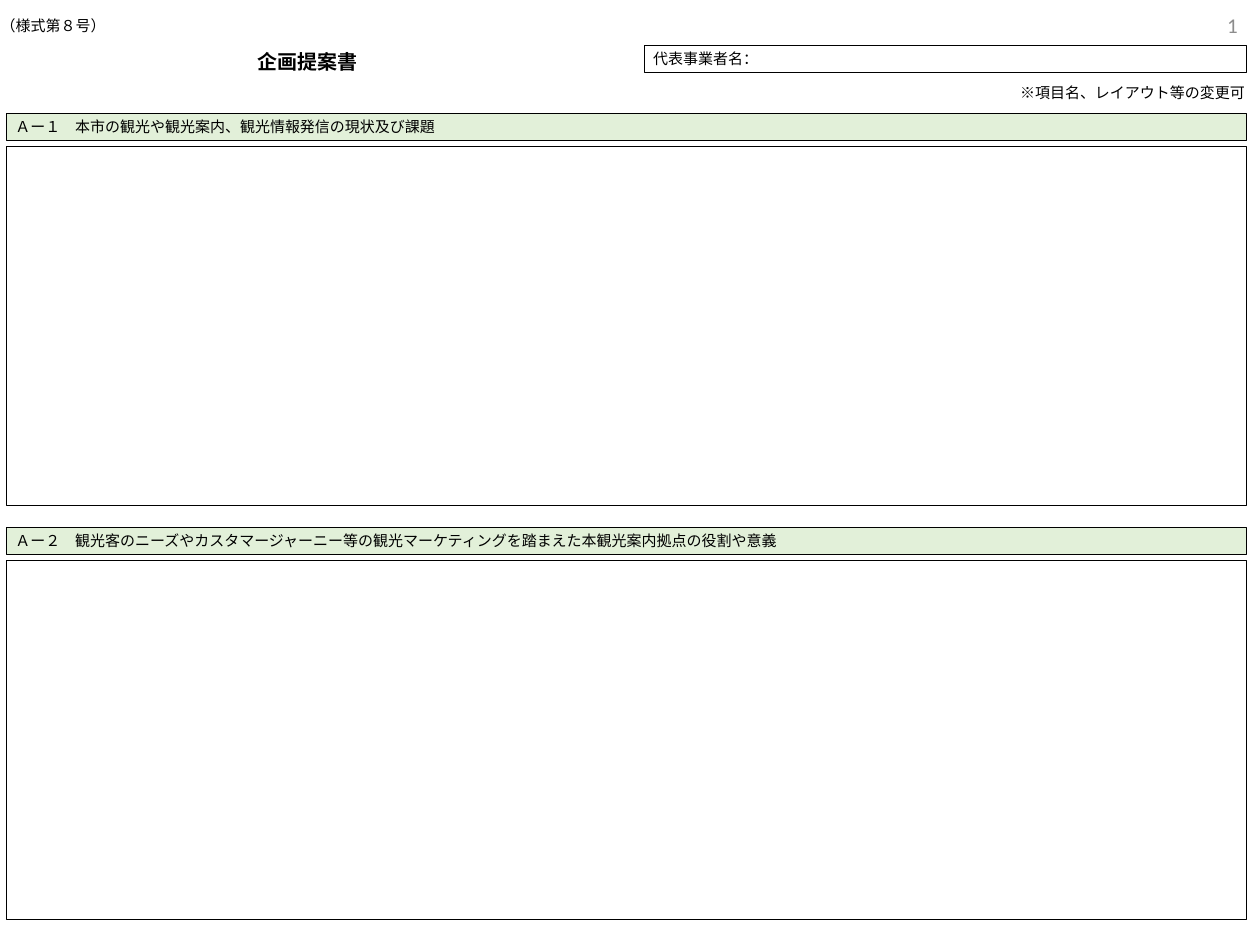
from dataclasses import dataclass

from lxml import etree
from pptx import Presentation
from pptx.dml.color import RGBColor
from pptx.enum.shapes import MSO_SHAPE
from pptx.enum.text import MSO_ANCHOR, MSO_AUTO_SIZE, PP_ALIGN
from pptx.oxml.ns import qn
from pptx.util import Pt

RECT = MSO_SHAPE.RECTANGLE
TOP, MIDDLE = MSO_ANCHOR.TOP, MSO_ANCHOR.MIDDLE
GROW, FIXED = MSO_AUTO_SIZE.SHAPE_TO_FIT_TEXT, MSO_AUTO_SIZE.NONE
LEFT, CENTER, RIGHT = PP_ALIGN.LEFT, PP_ALIGN.CENTER, PP_ALIGN.RIGHT


@dataclass(frozen=True)
class Theme:
    font: str = "Noto Sans CJK JP"
    number_font: str = "Calibri"
    ink: RGBColor = RGBColor(0x00, 0x00, 0x00)
    gray: RGBColor = RGBColor(0x8C, 0x8C, 0x8C)
    heading_fill: RGBColor = RGBColor(0xE2, 0xF0, 0xD9)
    body_size: float = 12
    title_size: float = 16
    number_size: float = 16.8
    line_width: float = 0.75


THEME = Theme()

# Shared geometry in points
MARGIN = 5.2
RIGHT_EDGE = 997.2
BAR_HEIGHT = 21.6
FRAME_OFFSET = 26.6
FRAME_HEIGHT = 287
SECTION_TOP = 90.7
SECTION_STEP = 331.2

SECTIONS = [
    "Ａー１　本市の観光や観光案内、観光情報発信の現状及び課題",
    "Ａー２　観光客のニーズやカスタマージャーニー等の観光マーケティングを踏まえた本観光案内拠点の役割や意義",
]


def write(sp, text, size=THEME.body_size, font=THEME.font, color=THEME.ink,
          bold=False, align=LEFT, anchor=TOP, fit=GROW):
    tf = sp.text_frame
    tf.word_wrap = True
    tf.auto_size = fit
    tf.vertical_anchor = anchor
    p = tf.paragraphs[0]
    p.text = text
    p.alignment = align
    p.font.size = Pt(size)
    p.font.name = font
    p.font.bold = bold
    p.font.color.rgb = color
    # Japanese text takes its typeface from the East Asian slot
    props = p._p.pPr.find(qn("a:defRPr"))
    etree.SubElement(props, qn("a:ea"), typeface=font)


def add_label(s, x, y, w, h, text, **style):
    sp = s.shapes.add_textbox(Pt(x), Pt(y), Pt(w), Pt(h))
    write(sp, text, **style)


def add_box(s, x, y, w, h, text="", fill=None):
    sp = s.shapes.add_shape(RECT, Pt(x), Pt(y), Pt(w), Pt(h))
    sp.shadow.inherit = False
    if fill is None:
        sp.fill.background()
    else:
        sp.fill.solid()
        sp.fill.fore_color.rgb = fill
    sp.line.color.rgb = THEME.ink
    sp.line.width = Pt(THEME.line_width)
    if text:
        write(sp, text)


def add_section(s, y, heading):
    width = RIGHT_EDGE - MARGIN
    add_box(s, MARGIN, y, width, BAR_HEIGHT, heading, THEME.heading_fill)
    add_box(s, MARGIN, y + FRAME_OFFSET, width, FRAME_HEIGHT)


def main():
    prs = Presentation()
    prs.slide_width, prs.slide_height = Pt(1008), Pt(756)
    s = prs.slides.add_slide(prs.slide_layouts[6])

    # Header
    add_label(s, -6.5, 10, 406.8, BAR_HEIGHT, "（様式第８号）")
    add_label(s, 160.6, 36.4, 170.6, 26.6, "企画提案書",
              size=THEME.title_size, bold=True, align=CENTER)
    add_box(s, 515.5, 36.4, RIGHT_EDGE - 515.5, BAR_HEIGHT, "代表事業者名：")
    add_label(s, 809, 63.4, 199, BAR_HEIGHT, "※項目名、レイアウト等の変更可")
    add_label(s, 770.4, 0, RIGHT_EDGE - 770.4, 40.3, "1",
              size=THEME.number_size, font=THEME.number_font,
              color=THEME.gray, align=RIGHT, anchor=MIDDLE, fit=FIXED)

    # Headed answer frames
    for i, heading in enumerate(SECTIONS):
        add_section(s, SECTION_TOP + i * SECTION_STEP, heading)

    prs.save("out.pptx")


if __name__ == "__main__":
    main()
